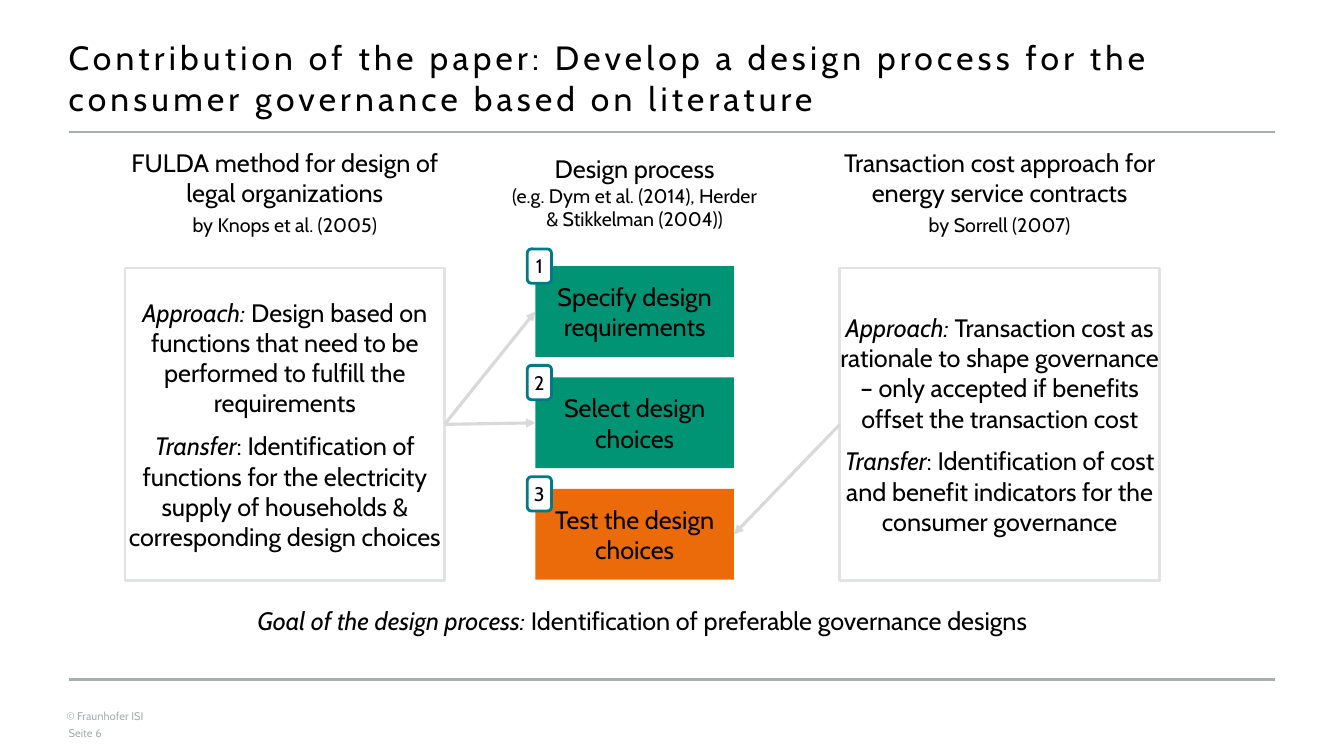
from dataclasses import dataclass

from lxml import etree
from pptx import Presentation
from pptx.dml.color import RGBColor
from pptx.enum.shapes import MSO_CONNECTOR, MSO_SHAPE
from pptx.enum.text import MSO_ANCHOR, PP_ALIGN
from pptx.oxml.ns import qn
from pptx.util import Inches, Pt

RECT, ROUNDED = MSO_SHAPE.RECTANGLE, MSO_SHAPE.ROUNDED_RECTANGLE
STRAIGHT = MSO_CONNECTOR.STRAIGHT
TOP, MIDDLE = MSO_ANCHOR.TOP, MSO_ANCHOR.MIDDLE
LEFT, CENTER = PP_ALIGN.LEFT, PP_ALIGN.CENTER
LEFT_SITE, RIGHT_SITE = 1, 3


@dataclass(frozen=True)
class Theme:
    font: str = "Cabin"
    text: str = "000000"
    white: str = "FFFFFF"
    green: str = "009475"
    orange: str = "EB6A0A"
    teal: str = "007A87"
    rule: str = "A8AFAF"
    card_line: str = "E1E3E3"
    arrow: str = "D9D9D9"
    title: int = 24
    body: int = 18
    small: int = 14
    footer: int = 8


THEME = Theme()

# Content: a paragraph is a list of (text, italic) runs
TITLE = ("Contribution of the paper: Develop a design process for the "
         "consumer governance based on literature")
PROCESS = ("Design process", "(e.g. Dym et al. (2014), Herder & Stikkelman (2004))")
FULDA = {
    "heading": ("FULDA method for design of legal organizations", "by Knops et al. (2005)"),
    "card": [
        [("Approach: ", True), ("Design based on functions that need to be "
                                "performed to fulfill the requirements", False)],
        [("Transfer", True), (": Identification of functions for the electricity supply "
                              "of households & corresponding design choices", False)],
    ],
}
TRANSACTION = {
    "heading": ("Transaction cost approach for energy service contracts", "by Sorrell (2007)"),
    "card": [
        [("Approach: ", True), ("Transaction cost as rationale to shape governance – only "
                                "accepted if benefits offset the transaction cost", False)],
        [("Transfer", True), (": Identification of cost and benefit indicators "
                              "for the consumer governance", False)],
    ],
}
# Step text, fill, rise of the number badge above the step
STEPS = [
    ("Specify design requirements", THEME.green, 0.17),
    ("Select design choices", THEME.green, 0.12),
    ("Test the design choices", THEME.orange, 0.12),
]
GOAL = [[("Goal of the design process: ", True),
         ("Identification of preferable governance designs", False)]]
COPYRIGHT, PAGE = "© Fraunhofer ISI", "Seite 6"

# Grid in inches
SLIDE_W, SLIDE_H = 13.33, 7.5
MARGIN, CONTENT_W = 0.68, 11.97
HEADING_Y, HEADING_H = 1.55, 0.71
CARD_Y, CARD_W, CARD_H = 2.66, 3.17, 3.1
FULDA_X, TRANSACTION_X = 1.24, 8.33
STEP_X, STEP_Y, STEP_W, STEP_H, STEP_PITCH = 5.31, 2.64, 1.97, 0.9, 1.105
BADGE_W, BADGE_H, BADGE_OVERHANG = 0.24, 0.34, 0.08
GOAL_Y, GOAL_H, GOAL_BOTTOM = 5.95, 0.71, 0.29


def rgb(value):
    return RGBColor.from_string(value)


def style(font, size, color=THEME.text):
    font.name, font.size = THEME.font, Pt(size)
    font.color.rgb = rgb(color)


def write(shape, paragraphs, sizes, align=CENTER, anchor=MIDDLE, color=THEME.text,
          gap=0, wrap=True):
    """Fill a shape with paragraphs of (text, italic) runs; gap is the space before later ones."""
    frame = shape.text_frame
    frame.word_wrap, frame.vertical_anchor = wrap, anchor
    frame.margin_left = frame.margin_right = frame.margin_top = frame.margin_bottom = 0
    for index, (runs, size) in enumerate(zip(paragraphs, sizes)):
        paragraph = frame.add_paragraph() if index else frame.paragraphs[0]
        paragraph.alignment = align
        paragraph.space_before = Pt(gap if index else 0)
        style(paragraph.font, size, color)
        for text, italic in runs:
            run = paragraph.add_run()
            run.text = text
            if italic:
                run.font.italic = True
    return frame


def plain(*texts):
    return [[(text, False)] for text in texts]


def text_box(slide, x, y, w, h):
    return slide.shapes.add_textbox(Inches(x), Inches(y), Inches(w), Inches(h))


def block(slide, x, y, w, h, fill, line=None, kind=RECT):
    shape = slide.shapes.add_shape(kind, Inches(x), Inches(y), Inches(w), Inches(h))
    shape.shadow.inherit = False
    shape.fill.solid()
    shape.fill.fore_color.rgb = rgb(fill)
    if line:
        shape.line.color.rgb = rgb(line)
        shape.line.width = Pt(2)
    else:
        shape.line.fill.background()
    return shape


def connector(slide, color, width, start=(0, 0), end=(0, 0), arrow=False):
    line = slide.shapes.add_connector(STRAIGHT, *map(Inches, start + end))
    line.line.color.rgb = rgb(color)
    line.line.width = Pt(width)
    if arrow:
        etree.SubElement(line.line._get_or_add_ln(), qn("a:tailEnd"), type="triangle")
    etree.SubElement(line._element.spPr, qn("a:effectLst"))
    return line


def link(slide, source, source_site, target, target_site):
    line = connector(slide, THEME.arrow, 2.25, arrow=True)
    line.begin_connect(source, source_site)
    line.end_connect(target, target_site)


def add_title(slide):
    title = slide.shapes.title
    title.left, title.top = Inches(MARGIN), Inches(0.37)
    title.width, title.height = Inches(CONTENT_W), Inches(0.81)
    frame = write(title, plain(TITLE), [THEME.title], LEFT, TOP)
    frame.paragraphs[0].runs[0]._r.get_or_add_rPr().set("spc", "300")


def add_frame(slide):
    """Footer texts and the two full-width rules."""
    for text, x, y in ((COPYRIGHT, 0.66, 7.04), (PAGE, MARGIN, 7.21)):
        write(text_box(slide, x, y, 2.62, 0.13), plain(text), [THEME.footer],
              LEFT, TOP, THEME.rule)
    for y, width in ((6.74, 2.5), (1.31, 1)):
        connector(slide, THEME.rule, width, (MARGIN, y), (MARGIN + CONTENT_W, y))


def add_heading(slide, heading, center, width, gap):
    box = text_box(slide, center - width / 2, HEADING_Y, width, HEADING_H)
    write(box, plain(*heading), [THEME.body, THEME.small], gap=gap)


def add_approach(slide, approach, x, heading_w):
    add_heading(slide, approach["heading"], x + CARD_W / 2, heading_w, gap=4)
    card = block(slide, x, CARD_Y, CARD_W, CARD_H, THEME.white, THEME.card_line)
    write(card, approach["card"], [THEME.body] * 2, gap=9)
    return card


def add_steps(slide):
    boxes = []
    for index, (text, fill, rise) in enumerate(STEPS):
        y = STEP_Y + index * STEP_PITCH
        box = block(slide, STEP_X, y, STEP_W, STEP_H, fill)
        write(box, plain(text), [THEME.body])
        badge = block(slide, STEP_X - BADGE_OVERHANG, y - rise, BADGE_W, BADGE_H,
                      THEME.white, THEME.teal, ROUNDED)
        write(badge, plain(str(index + 1)), [THEME.small], wrap=False)
        boxes.append(box)
    return boxes


def main():
    deck = Presentation()
    deck.slide_width, deck.slide_height = Inches(SLIDE_W), Inches(SLIDE_H)
    slide = deck.slides.add_slide(deck.slide_layouts[5])
    add_frame(slide)
    add_title(slide)

    specify, select, test = add_steps(slide)
    add_heading(slide, PROCESS, STEP_X + STEP_W / 2, 2.56, gap=0)
    fulda = add_approach(slide, FULDA, FULDA_X, 3.07)
    transaction = add_approach(slide, TRANSACTION, TRANSACTION_X, 3.36)
    for step in (specify, select):
        link(slide, fulda, RIGHT_SITE, step, LEFT_SITE)
    link(slide, transaction, LEFT_SITE, test, RIGHT_SITE)

    goal_w = TRANSACTION_X + CARD_W - FULDA_X
    goal = block(slide, FULDA_X, GOAL_Y, goal_w, GOAL_H, THEME.white)
    write(goal, GOAL, [THEME.body]).margin_bottom = Inches(GOAL_BOTTOM)
    deck.save("out.pptx")


if __name__ == "__main__":
    main()
